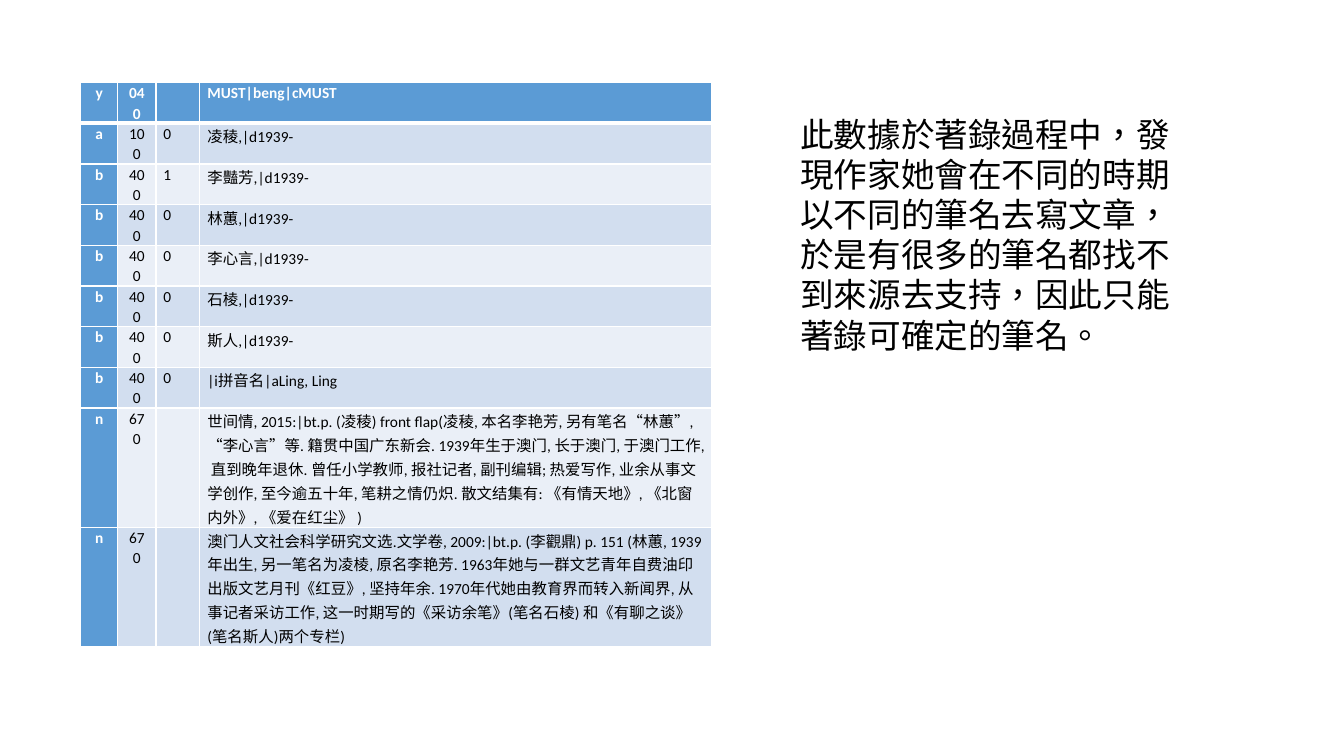
"""Build a slide with an authority-record table and a remark on pen names."""
from dataclasses import dataclass

from lxml.etree import SubElement
from pptx import Presentation as new_presentation
from pptx.dml.color import RGBColor as Color
from pptx.enum.lang import MSO_LANGUAGE_ID as Language
from pptx.enum.text import MSO_AUTO_SIZE as AutoSize, PP_ALIGN as Align
from pptx.oxml.ns import qn
from pptx.slide import Slide
from pptx.table import Table, _Cell as Cell
from pptx.text.text import _Run as Run
from pptx.util import Pt


@dataclass(frozen=True)
class Theme:
    """Colours, fonts and type sizes of the slide."""
    accent: str = "5B9BD5"
    odd_band: str = "D2DEEF"
    even_band: str = "EAEFF7"
    light: str = "FFFFFF"
    dark: str = "000000"
    latin_font: str = "Calibri"
    asian_font: str = "Noto Sans CJK SC"
    table_size: float = 11
    remark_size: float = 24
    table_spacing: float = 1.07
    remark_spacing: float = 28.7
    thin_border: float = 1
    thick_border: float = 3


@dataclass(frozen=True)
class Field:
    """One field of the authority record."""
    group: str
    tag: str
    indicator: str
    content: str
    height: float = 29

    def texts(self) -> tuple[str, ...]:
        """Return the cell texts from left to right."""
        return self.group, self.tag, self.indicator, self.content


@dataclass(frozen=True)
class Box:
    """A place on the slide, in points."""
    left: float
    top: float
    width: float
    height: float

    def lengths(self) -> tuple[Pt, ...]:
        """Return left, top, width and height as lengths."""
        return Pt(self.left), Pt(self.top), Pt(self.width), Pt(self.height)


THEME = Theme()
COLUMN_WIDTHS = (26.6, 27.2, 31.4, 365.8)
CENTRED_COLUMNS = 2
TABLE_LEFT, TABLE_TOP = 57.6, 59
REMARK_BOX = Box(564.5, 77.8, 298, 181.4)
LONG_ROW = 85
CELL_FORMAT = {"margin_left": Pt(5.4), "margin_right": Pt(5.4),
               "margin_top": 0, "margin_bottom": 0}
REMARK = ("此數據於著錄過程中，發現作家她會在不同的時期以不同的筆名去寫文章，"
          "於是有很多的筆名都找不到來源去支持，因此只能著錄可確定的筆名。")
FIELDS = (
    Field("y", "040", "", "MUST|beng|cMUST"),
    Field("a", "100", "0", "凌稜,|d1939-"),
    Field("b", "400", "1", "李豔芳,|d1939-"),
    Field("b", "400", "0", "林蕙,|d1939-"),
    Field("b", "400", "0", "李心言,|d1939-"),
    Field("b", "400", "0", "石棱,|d1939-"),
    Field("b", "400", "0", "斯人,|d1939-"),
    Field("b", "400", "0", "|i拼音名|aLing, Ling"),
    Field("n", "670", "",
          "世间情, 2015:|bt.p. (凌稜) front flap(凌稜, 本名李艳芳, 另有笔名“林蕙”, "
          "“李心言”等. 籍贯中国广东新会. 1939年生于澳门, 长于澳门, 于澳门工作, "
          "直到晚年退休. 曾任小学教师, 报社记者, 副刊编辑; 热爱写作, 业余从事文学创作, "
          "至今逾五十年, 笔耕之情仍炽. 散文结集有: 《有情天地》, 《北窗内外》, "
          "《爱在红尘》 )", LONG_ROW),
    Field("n", "670", "",
          "澳门人文社会科学研究文选.文学卷, 2009:|bt.p. (李觀鼎) p. 151 (林蕙, "
          "1939年出生, 另一笔名为凌棱, 原名李艳芳. 1963年她与一群文艺青年自费油印"
          "出版文艺月刊《红豆》, 坚持年余. 1970年代她由教育界而转入新闻界, "
          "从事记者采访工作, 这一时期写的《采访余笔》(笔名石棱) 和《有聊之谈》"
          "(笔名斯人)两个专栏)", LONG_ROW),
)


def set_attributes(target: object, values: dict) -> None:
    """Set each named attribute on the target."""
    for name, value in values.items():
        setattr(target, name, value)


def format_run(run: Run, colour: str, latin_font: str, values: dict) -> None:
    """Give a run its font values, colour and East Asian typeface."""
    set_attributes(run.font, {"name": latin_font, **values})
    run.font.color.rgb = Color.from_string(colour)
    asian = SubElement(run.font._element, qn("a:ea"))
    asian.set("typeface", THEME.asian_font)


def add_borders(cell: Cell, row: int) -> None:
    """Rule the four sides of a cell, with a thick line below the header."""
    widths = {"L": THEME.thin_border, "R": THEME.thin_border,
              "T": THEME.thick_border if row == 1 else THEME.thin_border,
              "B": THEME.thick_border if row == 0 else THEME.thin_border}
    properties = cell._tc.get_or_add_tcPr()
    for side, width in widths.items():
        line = SubElement(properties, qn(f"a:ln{side}"), w=str(Pt(width)))
        fill = SubElement(line, qn("a:solidFill"))
        SubElement(fill, qn("a:srgbClr"), val=THEME.light)


def fill_cell(cell: Cell, text: str, row: int, column: int) -> None:
    """Write and format one table cell."""
    heading = row == 0 or column == 0
    band = THEME.odd_band if row % 2 else THEME.even_band
    set_attributes(cell, CELL_FORMAT)
    add_borders(cell, row)
    cell.fill.solid()
    cell.fill.fore_color.rgb = Color.from_string(THEME.accent if heading else band)
    if not text:
        return
    paragraph = cell.text_frame.paragraphs[0]
    set_attributes(paragraph, {
        "alignment": Align.CENTER if column < CENTRED_COLUMNS else Align.LEFT,
        "line_spacing": THEME.table_spacing})
    run = paragraph.add_run()
    run.text = text
    format_run(run, THEME.light if heading else THEME.dark, THEME.latin_font,
               {"size": Pt(THEME.table_size), "bold": heading})


def add_record_table(slide: Slide) -> Table:
    """Add the table of record fields."""
    box = Box(TABLE_LEFT, TABLE_TOP, sum(COLUMN_WIDTHS),
              sum(field.height for field in FIELDS))
    table = slide.shapes.add_table(len(FIELDS), len(COLUMN_WIDTHS), *box.lengths()).table
    for column, width in zip(table.columns, COLUMN_WIDTHS):
        column.width = Pt(width)
    for row, field in enumerate(FIELDS):
        table.rows[row].height = Pt(field.height)
        for column, text in enumerate(field.texts()):
            fill_cell(table.cell(row, column), text, row, column)
    return table


def add_remark(slide: Slide) -> None:
    """Add the remark beside the table."""
    frame = slide.shapes.add_textbox(*REMARK_BOX.lengths()).text_frame
    set_attributes(frame, {"word_wrap": True, "auto_size": AutoSize.SHAPE_TO_FIT_TEXT})
    paragraph = frame.paragraphs[0]
    paragraph.line_spacing = Pt(THEME.remark_spacing)
    run = paragraph.add_run()
    run.text = REMARK
    format_run(run, THEME.dark, THEME.asian_font,
               {"size": Pt(THEME.remark_size),
                "language_id": Language.TRADITIONAL_CHINESE})


def main() -> None:
    """Build and save the presentation."""
    presentation = new_presentation()
    set_attributes(presentation, {"slide_width": Pt(960), "slide_height": Pt(540)})
    slide = presentation.slides.add_slide(presentation.slide_layouts.get_by_name("Blank"))
    add_record_table(slide)
    add_remark(slide)
    presentation.save("out.pptx")


if __name__ == "__main__":
    main()
